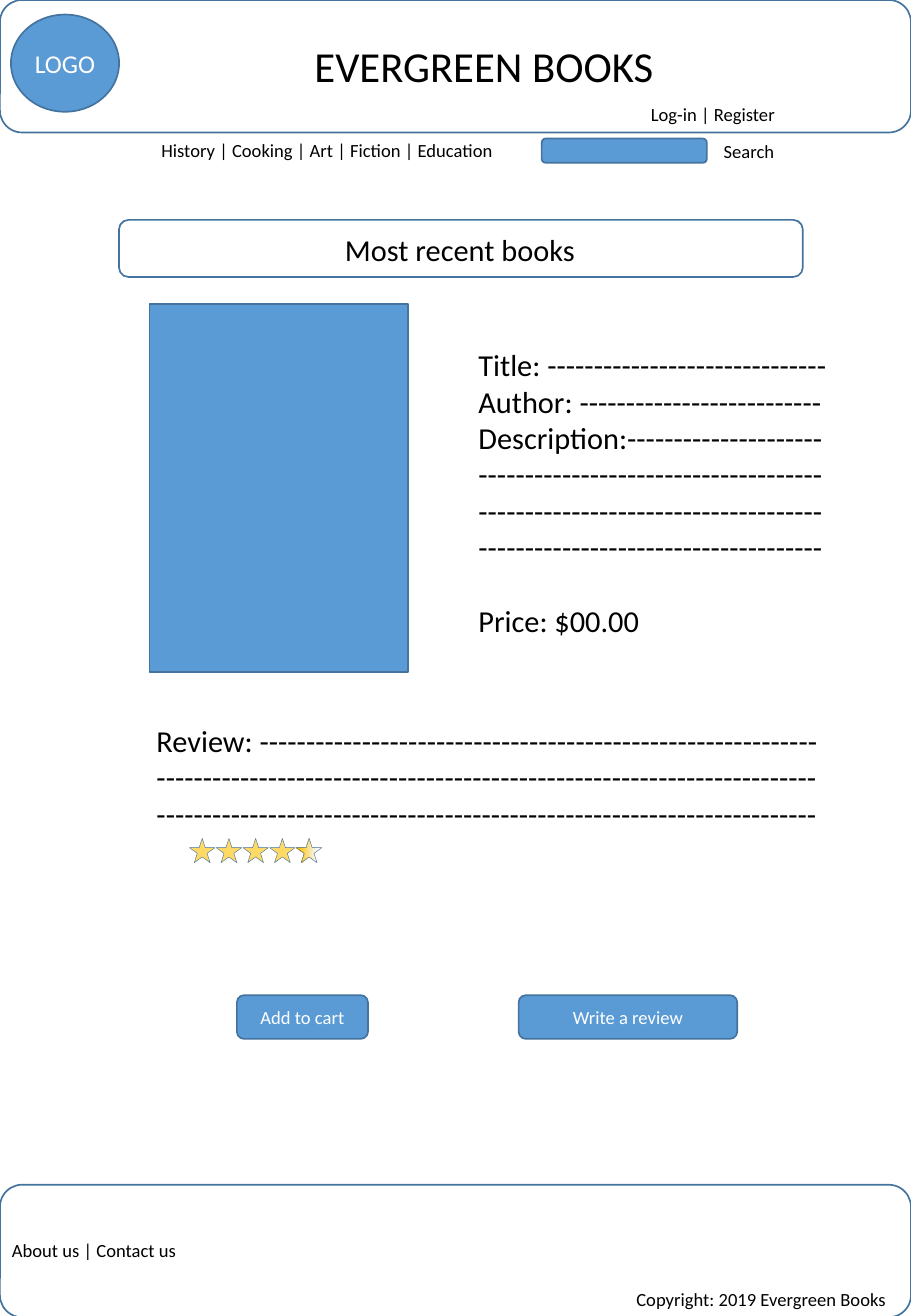
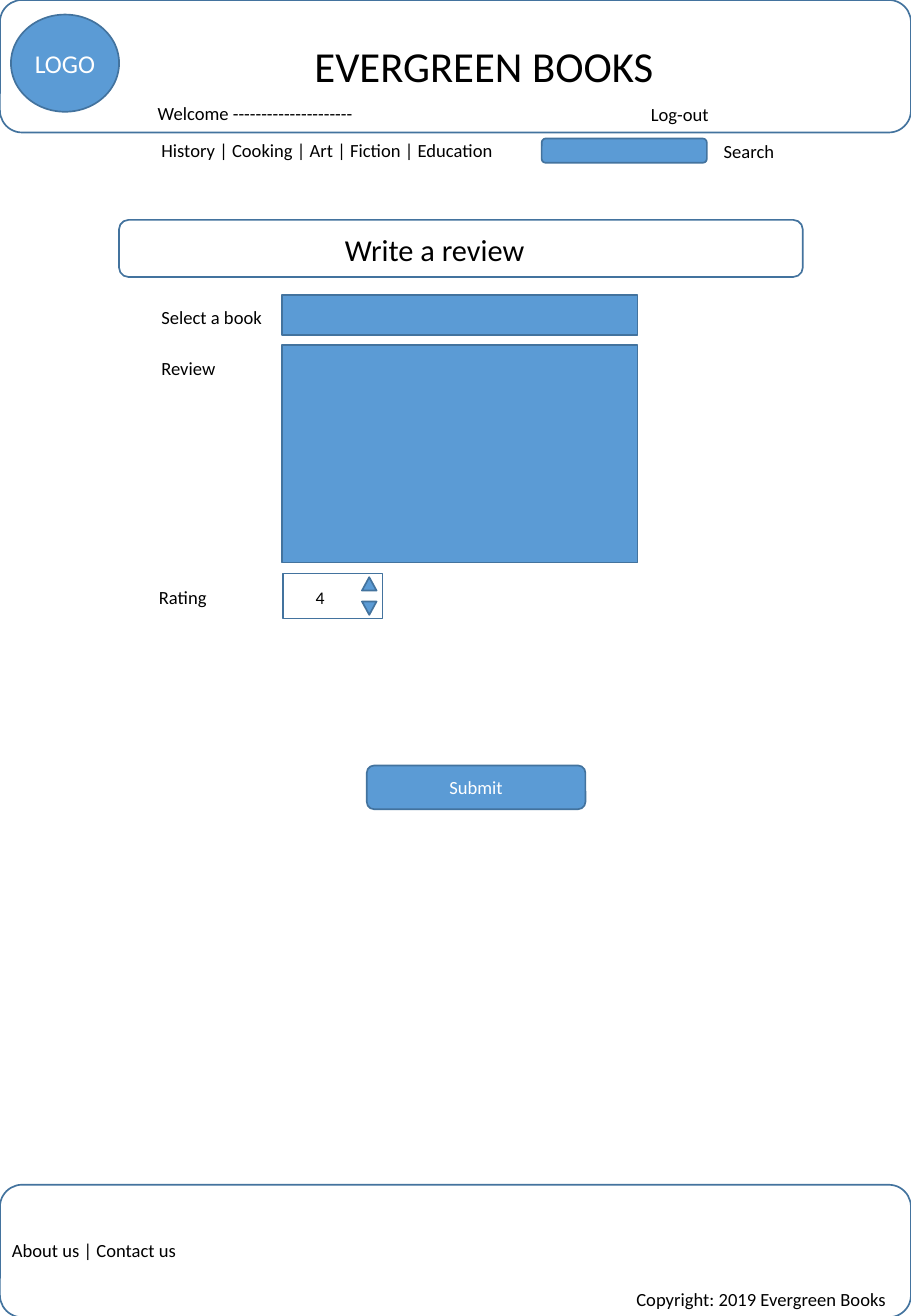
from pptx import Presentation
from pptx.dml.color import RGBColor
from pptx.enum.shapes import MSO_SHAPE as SHAPE
from pptx.enum.text import MSO_ANCHOR, MSO_AUTO_SIZE, PP_ALIGN
from pptx.util import Emu, Pt

PX = 9144  # 100 px to the inch
WIDTH, HEIGHT = 750, 1083
FONT = "Calibri"
BLACK = RGBColor(0x00, 0x00, 0x00)
WHITE = RGBColor(0xFF, 0xFF, 0xFF)
BLUE = RGBColor(0x5B, 0x9B, 0xD5)
OUTLINE = RGBColor(0x43, 0x73, 0x9E)
YELLOW = RGBColor(0xFF, 0xD9, 0x66)
GOLD = RGBColor(0xFF, 0xC0, 0x00)
PALE = RGBColor(0xF7, 0xFA, 0xFD)
SMALL, MEDIUM, LOGO, BRAND = 11, 18, 15.2, 25.3

# Shapes: kind, box, fill. Labels: text, box, size. Buttons: text, box.
FRAME_SHAPES = [
    (SHAPE.ROUNDED_RECTANGLE, (0, 0, WIDTH, 109), None),
    (SHAPE.ROUNDED_RECTANGLE, (446, 114, 136, 20), BLUE),
    (SHAPE.ROUNDED_RECTANGLE, (98, 181, 563, 47), None),
    (SHAPE.ROUNDED_RECTANGLE, (0, 975, WIDTH, 109), None),
]
FRAME_LABELS = [
    ("EVERGREEN BOOKS", (249, 28, 302, 53), BRAND),
    ("History | Cooking | Art | Fiction | Education", (123, 109, 308, 29), SMALL),
    ("Search", (586, 110, 63, 29), SMALL),
    ("About us | Contact us", (0, 1015, 156, 29), SMALL),
    ("Copyright: 2019 Evergreen Books", (514, 1055, 228, 29), SMALL),
]
DETAILS = [
    "Title: " + "-" * 30,
    "Author: " + "-" * 26,
    "Description:" + "-" * 21,
    *["-" * 37] * 3,
    "Price: $00.00",
]
REVIEW = ["Review: " + "-" * 60, *["-" * 71] * 2]
PAGES = [
    {
        "title": ("Most recent books", 211),
        "shapes": [(SHAPE.RECTANGLE, (123, 250, 213, 303), BLUE)],
        "labels": [
            ("Log-in | Register", (526, 80, 123, 29), SMALL),
            ("\n".join(REVIEW), (119, 589, 576, 101), MEDIUM),
        ],
        "buttons": [("Add to cart", (195, 819, 108, 36)),
                    ("Write a review", (427, 819, 180, 36))],
    },
    {
        "title": ("Write a review", 170),
        "shapes": [
            (SHAPE.RECTANGLE, (232, 243, 293, 33), BLUE),
            (SHAPE.RECTANGLE, (232, 284, 293, 179), BLUE),
            (SHAPE.RECTANGLE, (233, 472, 82, 37), None),
        ],
        "labels": [
            ("Welcome " + "-" * 21, (120, 79, 183, 29), SMALL),
            ("Log-out", (526, 80, 71, 29), SMALL),
            ("Select a book", (123, 247, 103, 29), SMALL),
            ("Review", (123, 289, 66, 29), SMALL),
            ("Rating", (121, 477, 60, 29), SMALL),
            ("4", (250, 478, 28, 28), 10.5),
        ],
        "buttons": [("Submit", (302, 630, 180, 36))],
    },
]
STAR_COUNT, STAR_STEP, FIRST_STAR = 5, 22, (156, 690, 21, 20)
ARROWS = [(475, 0), (495, 180)]


def emu(box):
    return [Emu(n * PX) for n in box]


def format_text(tf, size, color, align):
    for p in tf.paragraphs:
        p.alignment = align
        for r in p.runs:
            r.font.name, r.font.size = FONT, Pt(size)
            r.font.color.rgb = color


def format_label(sp, text, size):
    """Black text on one unwrapped line per paragraph, from the top left."""
    tf = sp.text_frame
    tf.text = text
    tf.word_wrap = False
    tf.auto_size = MSO_AUTO_SIZE.SHAPE_TO_FIT_TEXT
    tf.vertical_anchor = MSO_ANCHOR.TOP
    format_text(tf, size, BLACK, PP_ALIGN.LEFT)


def add_label(slide, text, box, size):
    sp = slide.shapes.add_textbox(*emu(box))
    format_label(sp, text, size)
    return sp


def add_outlined(slide, kind, box, fill, weight=1):
    sp = slide.shapes.add_shape(kind, *emu(box))
    sp.shadow.inherit = False
    if fill is None:
        sp.fill.background()
    else:
        sp.fill.solid()
        sp.fill.fore_color.rgb = fill
    sp.line.color.rgb = OUTLINE
    sp.line.width = Pt(weight)
    return sp


def add_button(slide, text, box, kind=SHAPE.ROUNDED_RECTANGLE, size=SMALL):
    tf = add_outlined(slide, kind, box, BLUE).text_frame
    tf.text = text
    tf.vertical_anchor = MSO_ANCHOR.MIDDLE
    tf.margin_left = tf.margin_right = Emu(4 * PX)
    tf.margin_top = tf.margin_bottom = Emu(2 * PX)
    format_text(tf, size, WHITE, PP_ALIGN.CENTER)


def add_page(prs, page):
    slide = prs.slides.add_slide(prs.slide_layouts[5])
    text, width = page["title"]
    title = slide.shapes.title
    title.left, title.top, title.width, title.height = emu((274, 185, width, 40))
    format_label(title, text, MEDIUM)
    for kind, box, fill in FRAME_SHAPES + page["shapes"]:
        add_outlined(slide, kind, box, fill)
    add_button(slide, "LOGO", (9, 12, 89, 80), SHAPE.OVAL, LOGO)
    for label in FRAME_LABELS + page["labels"]:
        add_label(slide, *label)
    for button in page["buttons"]:
        add_button(slide, *button)
    return slide


def add_details(slide):
    sp = add_label(slide, "\n".join(DETAILS), (384, 280, 309, 252), MEDIUM)
    sp.text_frame.paragraphs[-1].space_before = Pt(22)


def add_rating(slide):
    """A row of stars, the last one half filled."""
    left, top, width, height = FIRST_STAR
    for i in range(STAR_COUNT):
        box = (left + i * STAR_STEP, top, width, height)
        star = add_outlined(slide, SHAPE.STAR_5_POINT, box, YELLOW, 0.25)
    star.fill.gradient()
    star.fill.gradient_angle = 180
    stops = [(0.2, PALE), (0.93, GOLD)]
    for stop, (position, color) in zip(star.fill.gradient_stops, stops):
        stop.position, stop.color.rgb = position, color


def add_spinner_arrows(slide):
    for top, rotation in ARROWS:
        arrow = add_outlined(slide, SHAPE.ISOSCELES_TRIANGLE, (298, top, 12, 11), BLUE)
        arrow.rotation = rotation


def main():
    prs = Presentation()
    prs.slide_width, prs.slide_height = emu((WIDTH, HEIGHT))
    recent, review = [add_page(prs, page) for page in PAGES]
    add_details(recent)
    add_rating(recent)
    add_spinner_arrows(review)
    prs.save("out.pptx")


if __name__ == "__main__":
    main()
